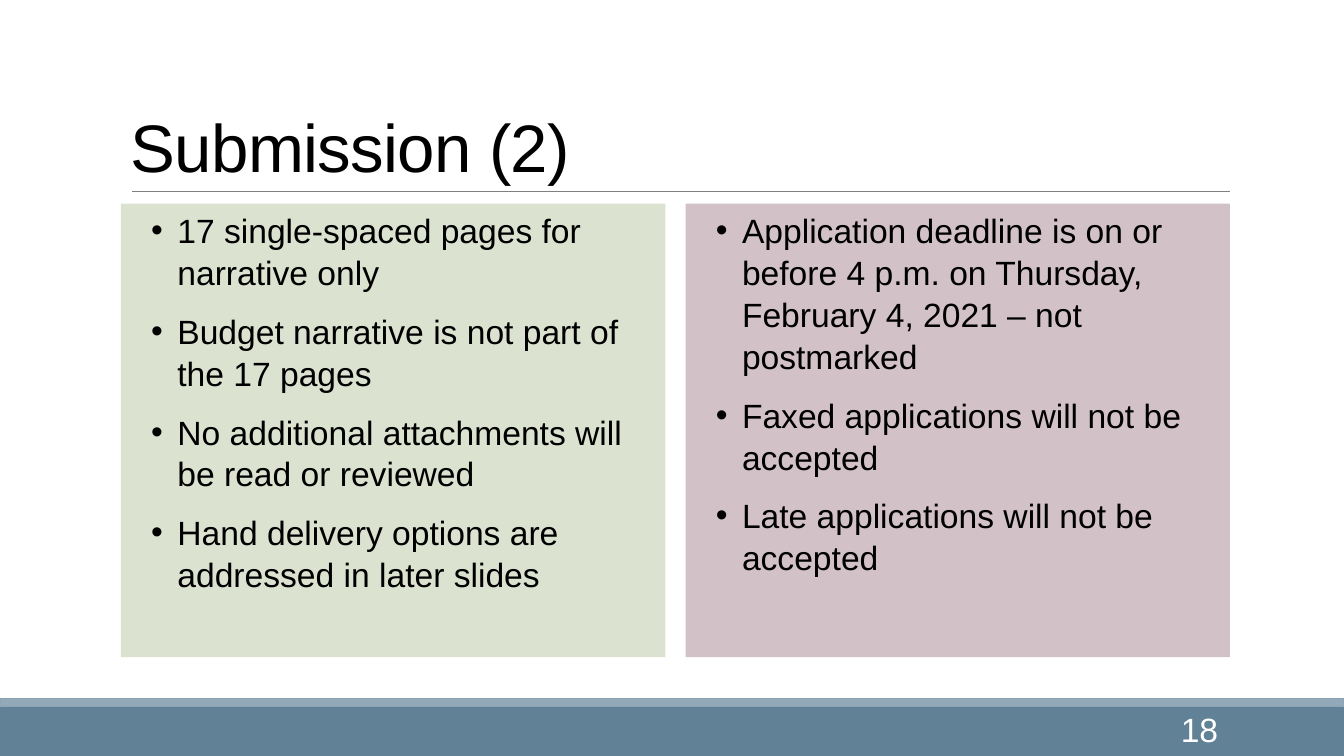
from dataclasses import dataclass

from lxml import etree
from pptx import Presentation
from pptx.dml.color import RGBColor
from pptx.enum.shapes import MSO_CONNECTOR as Connector, MSO_SHAPE as Shape
from pptx.enum.text import MSO_ANCHOR as Anchor, PP_ALIGN as Align
from pptx.oxml.ns import qn
from pptx.util import Inches, Pt


@dataclass(frozen=True)
class Theme:
    font: str = "Arial"
    ink: str = "000000"
    light: str = "FFFFFF"
    footer: str = "618197"
    stripe: str = "92A9B9"
    stripe_edge: str = "8FA3B6"
    rule: str = "808080"
    green: str = "DCE2D0"
    mauve: str = "D2C2C7"
    title_size: int = 48
    body_size: int = 24


THEME = Theme()

SUBMISSION_RULES = [
    "17 single-spaced pages for narrative only",
    "Budget narrative is not part of the 17 pages",
    "No additional attachments will be read or reviewed",
    "Hand delivery options are addressed in later slides",
]
DEADLINE_RULES = [
    "Application deadline is on or before 4 p.m. on Thursday, February 4, 2021 – not postmarked",
    "Faxed applications will not be accepted",
    "Late applications will not be accepted",
]


def apply(target, values):
    for name, value in values.items():
        setattr(target, name, value)


def rgb(color):
    return RGBColor.from_string(color)


def write(para, text, size, color):
    span = para.add_run()
    span.text = text
    apply(span.font, {"name": THEME.font, "size": Pt(size)})
    span.font.color.rgb = rgb(color)
    return span


def add_bullet(para, indent, hanging):
    props = para._p.get_or_add_pPr()
    props.set("marL", str(Inches(indent)))
    props.set("indent", str(-Inches(hanging)))
    etree.SubElement(props, qn("a:buFont")).set("typeface", THEME.font)
    etree.SubElement(props, qn("a:buChar")).set("char", "•")


def add_panel(page, box, color, edge=None):
    panel = page.shapes.add_shape(Shape.RECTANGLE, *map(Inches, box))
    panel.shadow.inherit = False
    panel.fill.solid()
    panel.fill.fore_color.rgb = rgb(color)
    if edge:
        panel.line.color.rgb = rgb(edge)
        panel.line.width = Pt(1.25)
    else:
        panel.line.fill.background()
    return panel


def add_label(page, box, text, size, color, frame_format, para_format):
    label = page.shapes.add_textbox(*map(Inches, box))
    apply(label.text_frame, {"word_wrap": True, **frame_format})
    para = label.text_frame.paragraphs[0]
    apply(para, para_format)
    return write(para, text, size, color)


def add_footer(page, box, number):
    left, top, width, height = box
    stripe = 0.08
    add_panel(page, (left, top + stripe, width, height - stripe), THEME.footer)
    add_panel(page, (left, top, width, stripe), THEME.stripe, THEME.stripe_edge)
    add_label(page, (left + 10.74, top + 0.1, 1.44, 0.4), number,
              THEME.body_size, THEME.light,
              {"vertical_anchor": Anchor.MIDDLE}, {"alignment": Align.RIGHT})


def add_title(page, box, text):
    left, top, width, height = box
    bottom = top + height
    rule = page.shapes.add_connector(
        Connector.STRAIGHT,
        *map(Inches, (left + 0.11, bottom, left + width, bottom)))
    rule.line.color.rgb = rgb(THEME.rule)
    rule.line.width = Pt(0.5)
    etree.SubElement(rule._element.spPr, qn("a:effectLst"))
    span = add_label(page, box, text, THEME.title_size, THEME.ink,
                     {"vertical_anchor": Anchor.BOTTOM}, {"line_spacing": 0.85})
    span.font._element.set("spc", "-50")


def add_rules(page, box, color, rules):
    frame = add_panel(page, box, color).text_frame
    sides = ("left", "top", "right", "bottom")
    apply(frame, {f"margin_{side}": Inches(0.05) for side in sides})
    apply(frame, {"word_wrap": True, "vertical_anchor": Anchor.TOP})
    for index, rule in enumerate(rules):
        para = frame.add_paragraph() if index else frame.paragraphs[0]
        apply(para, {"alignment": Align.LEFT, "line_spacing": 1.04,
                     "space_before": Pt(6 if index else 0), "space_after": Pt(6)})
        add_bullet(para, 0.51, 0.26)
        write(para, rule, THEME.body_size, THEME.ink)


def add_columns(page, box, columns, gap=0.2):
    left, top, width, height = box
    column_width = (width - gap * (len(columns) - 1)) / len(columns)
    for index, (color, rules) in enumerate(columns):
        column_left = left + index * (column_width + gap)
        add_rules(page, (column_left, top, column_width, height), color, rules)


def main():
    deck = Presentation()
    apply(deck, {"slide_width": Inches(13.33), "slide_height": Inches(7.5)})
    page = deck.slides.add_slide(deck.slide_layouts[6])
    add_footer(page, (0, 6.93, 13.33, 0.57), "18")
    add_title(page, (1.2, 0.31, 11, 1.59), "Submission (2)")
    add_columns(page, (1.2, 2.02, 11, 4.5),
                [(THEME.green, SUBMISSION_RULES), (THEME.mauve, DEADLINE_RULES)])
    deck.save("out.pptx")


if __name__ == "__main__":
    main()
